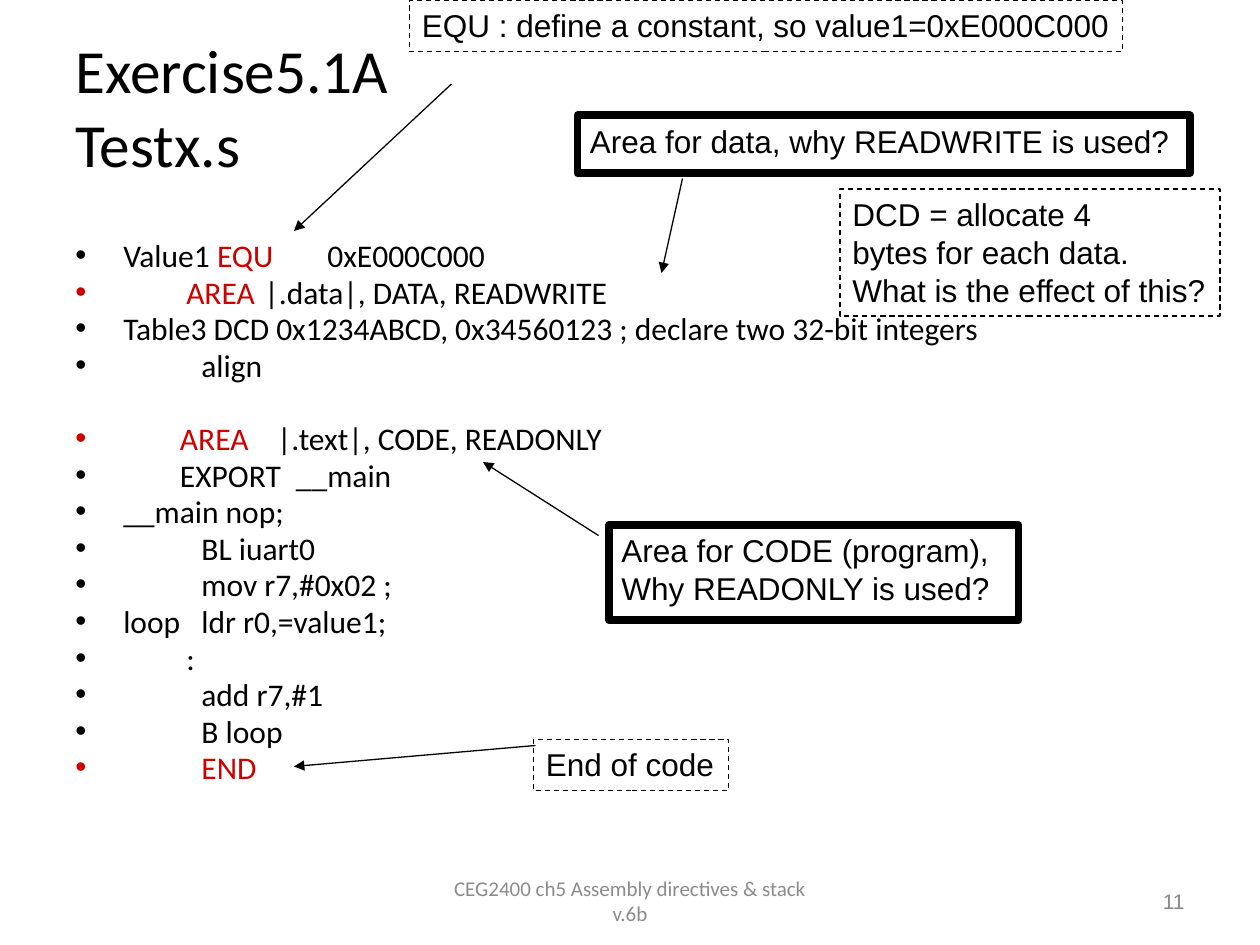
from lxml.etree import SubElement
from pptx import Presentation
from pptx.dml.color import RGBColor
from pptx.enum.dml import MSO_LINE
from pptx.enum.shapes import MSO_CONNECTOR, MSO_SHAPE
from pptx.enum.text import MSO_ANCHOR, PP_ALIGN
from pptx.oxml.ns import qn
from pptx.util import Inches, Pt

BLACK, RED, GREY, PALE_GREY = "000000", "CC0000", "8C8C8C", "898989"
BULLET_INDENT = 0.38


def colour(value):
    return RGBColor.from_string(value)


def grid(*units):
    """Turn grid units into lengths: 12 columns or rows to the inch."""
    return [Inches(unit / 12) for unit in units]


class Page:
    """The current slide and its style."""

    body_font, note_font = "Calibri", "Arial"
    text_size, thin, thick = 18, 0.75, 4.5

    def __init__(self, deck):
        self.slide = deck.slides.add_slide(deck.slide_layouts[6])

    def span(self, para, text, font, size, fill=BLACK):
        span = para.add_run()
        span.text = text
        span.font.name, span.font.size = font, Pt(size)
        span.font.color.rgb = colour(fill)

    def text_frame(self, place, anchor=MSO_ANCHOR.TOP):
        frame = self.slide.shapes.add_textbox(*grid(*place)).text_frame
        frame.word_wrap, frame.vertical_anchor = True, anchor
        return frame

    def label(self, place, lines, size, fill=BLACK, align=PP_ALIGN.LEFT, font=None):
        para = self.text_frame(place, MSO_ANCHOR.MIDDLE).paragraphs[0]
        para.alignment = align
        for number, line in enumerate(lines):
            if number:
                para.add_line_break()
            self.span(para, line, font or self.body_font, size, fill)

    def bullet(self, para, indent, gap, tab):
        para.line_spacing, para.space_before = 0.8, Pt(gap)
        props = para._p.get_or_add_pPr()
        props.set("marL", str(Inches(indent)))
        props.set("indent", str(-Inches(indent)))
        SubElement(props, qn("a:buFont"), typeface="Arial")
        SubElement(props, qn("a:buChar"), char="•")
        if tab:
            stops = SubElement(props, qn("a:tabLst"))
            SubElement(stops, qn("a:tab"), pos=str(Inches(tab)), algn="l")

    def listing(self, place, rows):
        frame = self.text_frame(place)
        for number, (indent, parts, gap, tab) in enumerate(rows):
            para = frame.add_paragraph() if number else frame.paragraphs[0]
            self.bullet(para, indent, gap, tab)
            for part in parts:
                fill = RED if part in ("EQU", "AREA", "END") else BLACK
                self.span(para, part, self.body_font, self.text_size, fill)

    def note(self, place, lines, bold_frame=False):
        box = self.slide.shapes.add_shape(MSO_SHAPE.RECTANGLE, *grid(*place))
        box.shadow.inherit = False
        box.fill.background()
        box.line.color.rgb = colour(BLACK)
        box.line.width = Pt(self.thick if bold_frame else self.thin)
        if not bold_frame:
            box.line.dash_style = MSO_LINE.DASH
        frame = box.text_frame
        frame.word_wrap, frame.margin_right = True, 0
        frame.vertical_anchor = MSO_ANCHOR.TOP
        for number, line in enumerate(lines):
            para = frame.add_paragraph() if number else frame.paragraphs[0]
            para.alignment = PP_ALIGN.LEFT
            self.span(para, line, self.note_font, self.text_size)

    def arrow(self, *ends):
        arrow = self.slide.shapes.add_connector(MSO_CONNECTOR.STRAIGHT, *grid(*ends))
        arrow.line.color.rgb = colour(BLACK)
        arrow.line.width = Pt(self.thin)
        SubElement(arrow.line._get_or_add_ln(), qn("a:tailEnd"), type="triangle")
        SubElement(arrow._element.spPr, qn("a:effectLst"))


def row(*parts, indent=BULLET_INDENT, gap=3.6, tab=None):
    return indent, parts, gap, tab


def main():
    deck = Presentation()
    deck.slide_width, deck.slide_height = Inches(10), Inches(7.5)
    page = Page(deck)

    # Title
    page.label((6, 1.6, 94, 17), ["Exercise5.1A", "Testx.s"], 35)

    # Assembly code
    page.listing((6, 22.6, 106, 57.8), [
        row("Value1 ", "EQU", "\t0xE000C000"),
        row("AREA", "\t|.data|, DATA, READWRITE", indent=0.88),
        row("Table3 DCD 0x1234ABCD, 0x34560123 ; declare two 32-bit integers"),
        row("align", indent=1),
        row("AREA", "\t|.text|, CODE, READONLY", indent=0.83, gap=24.6, tab=1.6),
        row("EXPORT\t__main", indent=0.83, tab=1.75),
        row("__main nop;"),
        row("BL iuart0", indent=1),
        row("mov r7,#0x02 ;", indent=1),
        row("loop\tldr r0,=value1;", tab=1),
        row(":", indent=0.88),
        row("add r7,#1", indent=1),
        row("B loop", indent=1),
        row("END", indent=1),
    ])

    # Footer and page number
    page.label((41, 83.4, 38, 4.8), ["CEG2400 ch5 Assembly directives & stack v.6b"],
               12, GREY, PP_ALIGN.CENTER)
    page.label((86, 83.4, 28, 4.8), ["11"], 12, PALE_GREY, PP_ALIGN.RIGHT, page.note_font)

    # Notes on the code
    page.note((55, 11, 58.3, 5.5), ["Area for data, why READWRITE is used?"], True)
    page.note((80, 18, 36.2, 12.1), ["DCD = allocate 4", "bytes for each data.",
                                     "What is the effect of this?"])
    page.note((58, 50, 39, 9.1), ["Area for CODE (program),", "Why READONLY is used?"], True)
    page.note((50.8, 70.4, 18.6, 4.9), ["End of code"])
    page.note((39, 0, 67.9, 4.9), ["EQU : define a constant, so value1=0xE000C000"])

    # Arrows from notes to code
    for ends in [(65, 17, 63, 26), (57, 51, 46, 44), (51, 71, 28, 73), (43, 8, 28, 22)]:
        page.arrow(*ends)

    deck.save("out.pptx")


if __name__ == "__main__":
    main()
